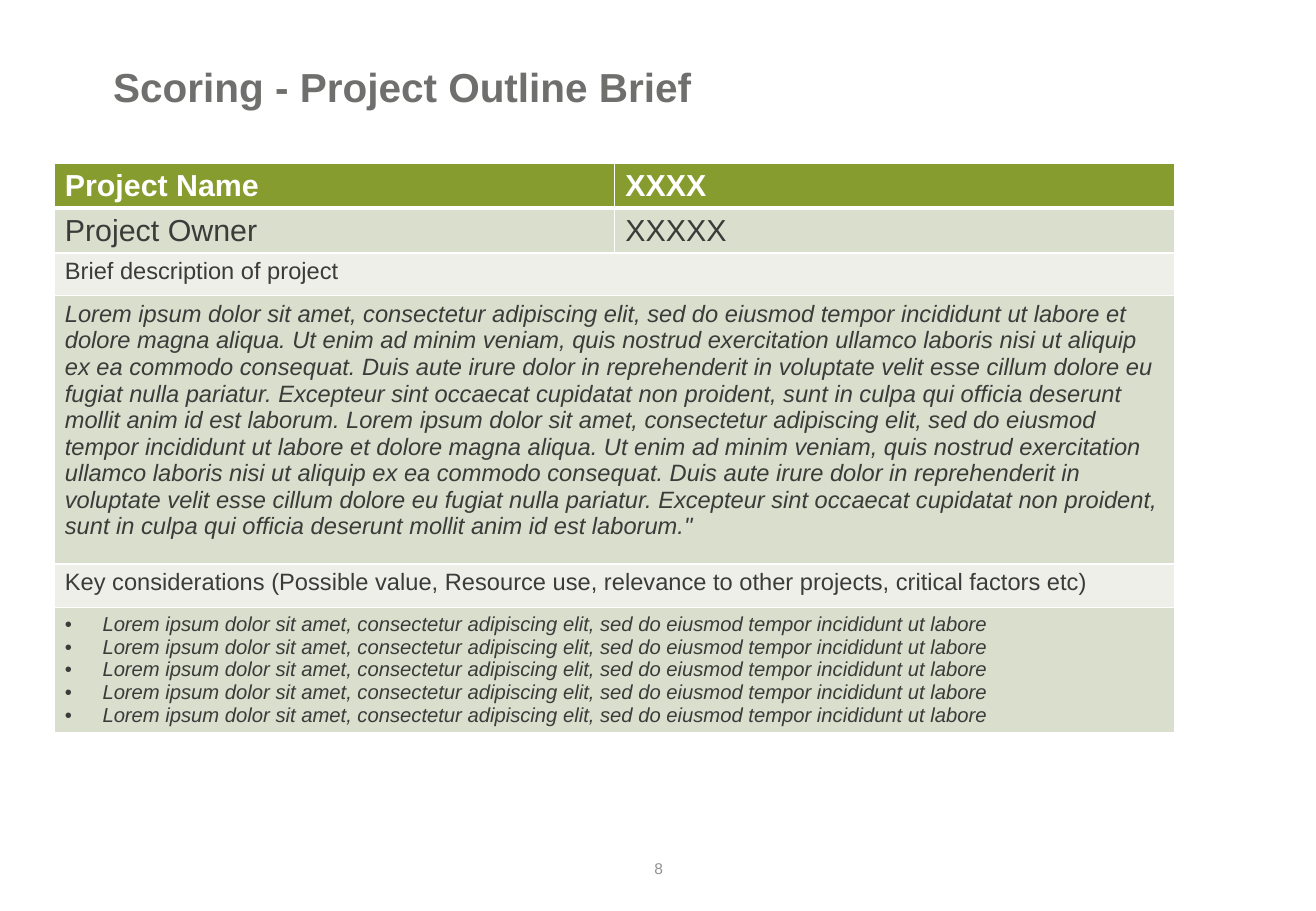
from lxml.etree import SubElement as Sub
from pptx import Presentation
from pptx.dml.color import RGBColor as RGB
from pptx.enum.text import MSO_ANCHOR as Anchor, PP_ALIGN as Align
from pptx.oxml.ns import qn
from pptx.util import Inches, Pt

WIDE, HIGH = Inches(10.83), Inches(7.5)
GREEN = RGB(0x86, 0x9C, 0x2F)
SAGE = RGB(0xD9, 0xDE, 0xCD)
PALE = RGB(0xED, 0xEF, 0xE8)
WHITE = RGB(0xFF, 0xFF, 0xFF)
INK = RGB(0x3B, 0x3B, 0x3A)
GREY = RGB(0x6F, 0x6F, 0x6E)
LIGHT = RGB(0x92, 0x92, 0x91)

LEAD = ("Lorem ipsum dolor sit amet, consectetur adipiscing elit, "
        "sed do eiusmod tempor incididunt ut labore")
LOREM = (LEAD + " et dolore magna aliqua. Ut enim ad minim veniam, quis nostrud "
         "exercitation ullamco laboris nisi ut aliquip ex ea commodo consequat. "
         "Duis aute irure dolor in reprehenderit in voluptate velit esse cillum "
         "dolore eu fugiat nulla pariatur. Excepteur sint occaecat cupidatat non "
         "proident, sunt in culpa qui officia deserunt mollit anim id est laborum.")
NOTE = ("Key considerations (Possible value, Resource use, relevance to other "
        "projects, critical factors etc)")

ROWS = [
    (["Project Name", "XXXX"], 0.37, GREEN, 18, WHITE, True, False),
    (["Project Owner", "XXXXX"], 0.37, SAGE, 18, INK, False, False),
    (["Brief description of project"], 0.35, PALE, 14, INK, False, False),
    ([f'{LOREM} {LOREM}"'], 2.21, SAGE, 14, INK, False, True),
    ([NOTE], 0.36, PALE, 14, INK, False, False),
    (["\n".join([LEAD] * 5)], 1.03, SAGE, 12, INK, False, True),
]


def share(x, y, w, h):
    return int(x * WIDE), int(y * HIGH), int(w * WIDE), int(h * HIGH)


def style(par, size, color, bold=False, slant=False):
    for run in par.runs:
        font = run.font
        font.name, font.size = "Arial", Pt(size)
        font.bold, font.italic = bold, slant
        font.color.rgb = color


def bullet(par):
    props = par._p.get_or_add_pPr()
    props.set("marL", str(Inches(0.31)))
    props.set("indent", str(-Inches(0.31)))
    Sub(props, qn("a:buFont"), typeface="Arial")
    Sub(props, qn("a:buChar"), char="•")


def border(cell, base):
    props = cell._tc.get_or_add_tcPr()
    for side, width in zip("LRTB", (1, 1, 1, base)):
        line = Sub(props, qn(f"a:ln{side}"), w=str(Pt(width)))
        fill = Sub(line, qn("a:solidFill"))
        Sub(fill, qn("a:srgbClr"), val=str(WHITE))


def heading(slide, box):
    title = slide.shapes.title
    title.left, title.top, title.width, title.height = box
    frame = title.text_frame
    frame.text = "Scoring - Project Outline Brief"
    frame.margin_left = 0
    frame.vertical_anchor = Anchor.TOP
    par = frame.paragraphs[0]
    par.alignment, par.line_spacing = Align.LEFT, 0.9
    style(par, 24, GREY, bold=True)


def brief(slide, box):
    table = slide.shapes.add_table(len(ROWS), 2, *box).table
    for col in table.columns:
        col.width = box[2] // 2
    for r, (texts, high, fill, size, color, bold, slant) in enumerate(ROWS):
        table.rows[r].height = Inches(high)
        for cell in table.rows[r].cells:
            border(cell, 3 if r == 0 else 1)
            cell.fill.solid()
            cell.fill.fore_color.rgb = fill
            cell.margin_left = cell.margin_right = Inches(0.09)
            cell.margin_top = cell.margin_bottom = Inches(0.045)
        if len(texts) == 1:
            table.cell(r, 0).merge(table.cell(r, 1))
        for c, text in enumerate(texts):
            frame = table.cell(r, c).text_frame
            frame.text = text
            for par in frame.paragraphs:
                if len(frame.paragraphs) > 1:
                    bullet(par)
                style(par, size, color, bold, slant)


def footer(slide, box):
    frame = slide.shapes.add_textbox(*box).text_frame
    frame.word_wrap = True
    frame.vertical_anchor = Anchor.MIDDLE
    frame.text = "8"
    par = frame.paragraphs[0]
    par.alignment = Align.CENTER
    style(par, 9.2, LIGHT)


def main():
    deck = Presentation()
    deck.slide_width, deck.slide_height = WIDE, HIGH
    slide = deck.slides.add_slide(deck.slide_layouts[5])
    heading(slide, share(0.086, 0.067, 0.847, 0.067))
    brief(slide, share(0.041, 0.179, 0.852, 0.625))
    footer(slide, share(0.388, 0.927, 0.225, 0.053))
    deck.save("out.pptx")


if __name__ == "__main__":
    main()
